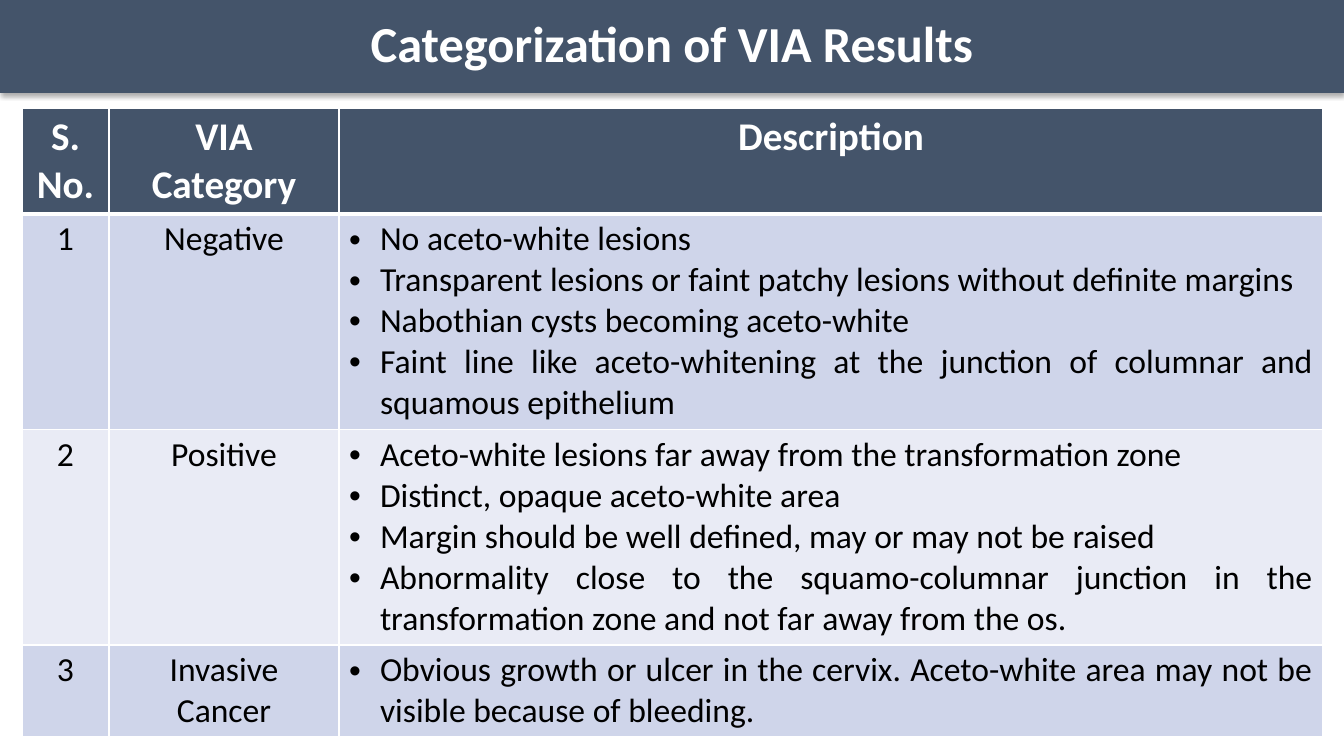
import pptx
import pptx.util
import pptx.dml.color
import pptx.enum.shapes
import pptx.enum.text
import pptx.oxml
import pptx.oxml.ns

RGB = pptx.dml.color.RGBColor
ALIGN = pptx.enum.text.PP_ALIGN
SLATE = RGB(0x44, 0x54, 0x6A)
BAND_DARK = RGB(0xCF, 0xD5, 0xEA)
BAND_LIGHT = RGB(0xE9, 0xEB, 0xF5)
WHITE = RGB(0xFF, 0xFF, 0xFF)
BLACK = RGB(0, 0, 0)

SLIDE_W, SLIDE_H = 1344, 756
EMU_PER_PX = 12192000 / SLIDE_W
NS = pptx.oxml.ns.nsdecls("a")

HEADERS = ["S. No.", "VIA Category", "Description"]
CATEGORIES = [
    ("Negative", [
        "No aceto-white lesions",
        "Transparent lesions or faint patchy lesions without definite margins",
        "Nabothian cysts becoming aceto-white",
        "Faint line like aceto-whitening at the junction of columnar and squamous epithelium",
    ]),
    ("Positive", [
        "Aceto-white lesions far away from the transformation zone",
        "Distinct, opaque aceto-white area",
        "Margin should be well defined, may or may not be raised",
        "Abnormality close to the squamo-columnar junction in the transformation zone "
        "and not far away from the os.",
    ]),
    ("Invasive Cancer", [
        "Obvious growth or ulcer in the cervix. Aceto-white area may not be visible "
        "because of bleeding.",
    ]),
]
COL_WIDTHS = [87, 230, 984]
ROW_HEIGHTS = [104, 216, 215, 92]


def px(n):
    return pptx.util.Emu(round(n * EMU_PER_PX))


class Deck:
    font = "Calibri"
    indent = 31

    def __init__(self):
        self.prs = pptx.Presentation()
        self.prs.slide_width, self.prs.slide_height = px(SLIDE_W), px(SLIDE_H)
        self.slide = self.prs.slides.add_slide(self.prs.slide_layouts[6])

    def run(self, p, text, size, color, bold=False, align=ALIGN.CENTER):
        p.alignment = align
        r = p.add_run()
        r.text = text
        r.font.name = self.font
        r.font.size = pptx.util.Pt(size)
        r.font.bold = bold
        r.font.color.rgb = color

    def bullet(self, p):
        pPr = p._p.get_or_add_pPr()
        pPr.set("marL", str(px(self.indent)))
        pPr.set("indent", str(-px(self.indent)))
        pPr.append(pptx.oxml.parse_xml(f'<a:buFont {NS} typeface="Arial"/>'))
        pPr.append(pptx.oxml.parse_xml(f'<a:buChar {NS} char="•"/>'))

    def title_bar(self, text, height):
        sp = self.slide.shapes.add_shape(
            pptx.enum.shapes.MSO_SHAPE.RECTANGLE, 0, 0, px(SLIDE_W), px(height))
        sp.fill.solid()
        sp.fill.fore_color.rgb = SLATE
        sp.line.fill.background()
        sp.shadow.inherit = False
        effects = sp._element.spPr.find(pptx.oxml.ns.qn("a:effectLst"))
        effects.append(pptx.oxml.parse_xml(
            f'<a:outerShdw {NS} blurRad="{pptx.util.Pt(3.5)}" dist="{pptx.util.Pt(2.2)}" '
            'dir="5400000" algn="t" rotWithShape="0"><a:srgbClr val="000000">'
            '<a:alpha val="32000"/></a:srgbClr></a:outerShdw>'))
        tf = sp.text_frame
        tf.word_wrap = True
        tf.vertical_anchor = pptx.enum.text.MSO_ANCHOR.MIDDLE
        tf.paragraphs[0].line_spacing = 0.9
        self.run(tf.paragraphs[0], text, 36, WHITE, bold=True)

    def table(self, x, y, widths, heights):
        table = self.slide.shapes.add_table(
            len(heights), len(widths), px(x), px(y), px(sum(widths)), px(sum(heights))).table
        for col, w in zip(table.columns, widths):
            col.width = px(w)
        for row, h in zip(table.rows, heights):
            row.height = px(h)
        return table

    def cell(self, cell, lines, fill, size, color, bold=False, bullets=False, top=1, bottom=1):
        tcPr = cell._tc.get_or_add_tcPr()
        for side, width in (("L", 1), ("R", 1), ("T", top), ("B", bottom)):
            tcPr.append(pptx.oxml.parse_xml(
                f'<a:ln{side} {NS} w="{pptx.util.Pt(width)}"><a:solidFill>'
                f'<a:srgbClr val="{WHITE}"/></a:solidFill></a:ln{side}>'))
        cell.fill.solid()
        cell.fill.fore_color.rgb = fill
        tf = cell.text_frame
        for i, line in enumerate(lines):
            p = tf.add_paragraph() if i else tf.paragraphs[0]
            self.run(p, line, size, color, bold, ALIGN.JUSTIFY if bullets else ALIGN.CENTER)
            if bullets:
                self.bullet(p)


def main():
    deck = Deck()
    deck.title_bar("Categorization of VIA Results", 93)

    # Header row
    table = deck.table(22, 108, COL_WIDTHS, ROW_HEIGHTS)
    for c, header in enumerate(HEADERS):
        deck.cell(table.cell(0, c), [header], SLATE, 28, WHITE, bold=True, bottom=3)

    # One banded row per category
    for n, (category, findings) in enumerate(CATEGORIES, 1):
        fill = BAND_DARK if n % 2 else BAND_LIGHT
        for c, lines in enumerate(([str(n)], [category], findings)):
            deck.cell(table.cell(n, c), lines, fill, 24, BLACK,
                      bullets=c == 2, top=3 if n == 1 else 1)

    deck.prs.save("out.pptx")


if __name__ == "__main__":
    main()
